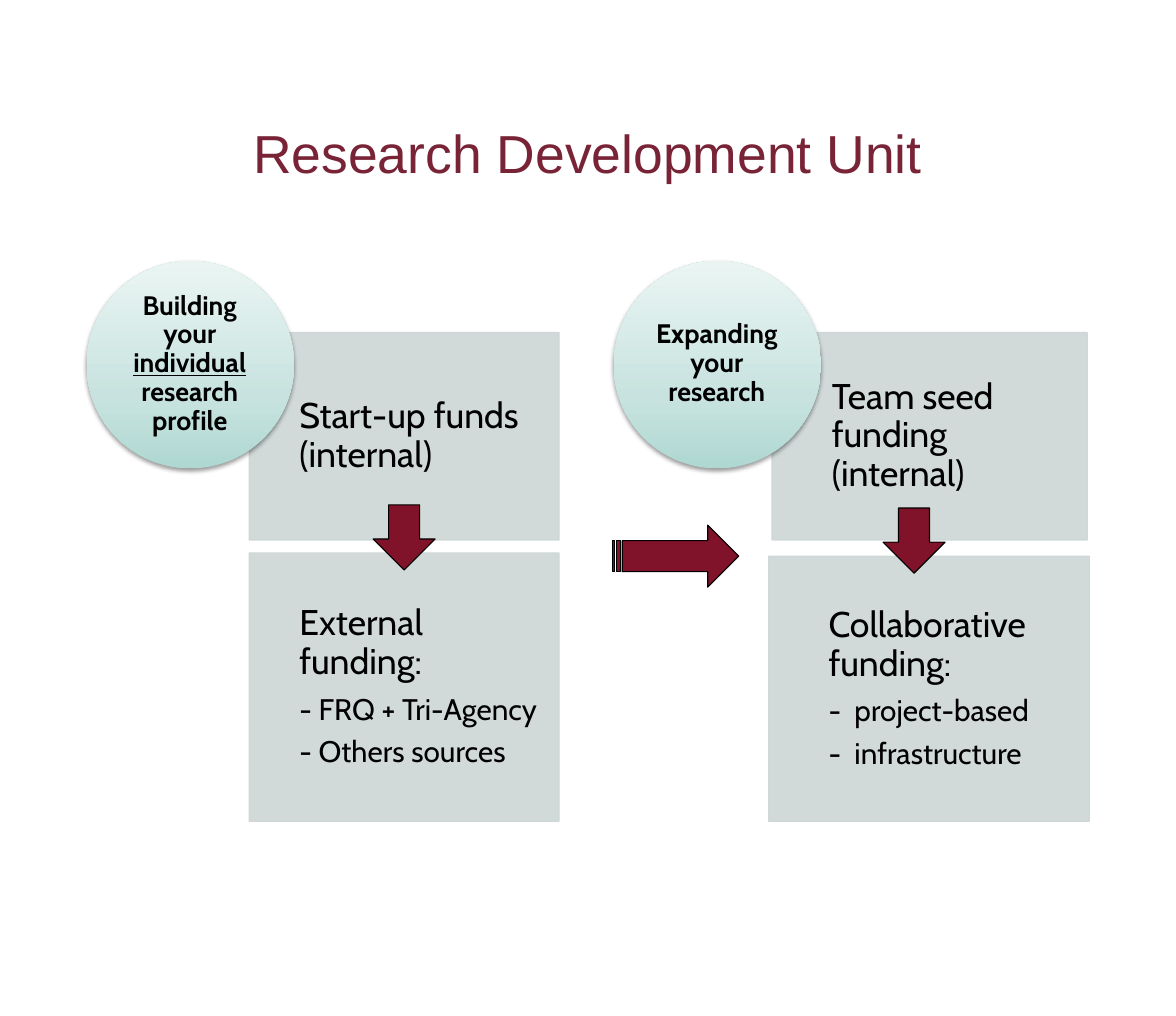
from dataclasses import dataclass
from typing import NamedTuple

from lxml.etree import SubElement
from pptx import Presentation
from pptx.dml.color import RGBColor
from pptx.enum.shapes import MSO_SHAPE
from pptx.enum.text import MSO_ANCHOR, PP_ALIGN
from pptx.oxml import parse_xml
from pptx.oxml.ns import nsdecls, qn
from pptx.util import Emu, Pt

PIXEL = 9144


@dataclass(frozen=True)
class Theme:
    title_color: str = "782336"
    text_color: str = "000000"
    panel: str = "CCD6D5"
    arrow: str = "801329"
    circle_stops: tuple = ((0, "AFD8D2"), (35, "C8E3DF"), (100, "EAF5F3"))
    title_font: str = "Arial"
    body_font: str = "Cabin"
    title_size: int = 36
    heading_size: int = 24
    item_size: int = 20
    circle_size: int = 18


class Box(NamedTuple):
    left: int
    top: int
    width: int
    height: int


class Words(NamedTuple):
    text: str
    underline: bool = False


class Panel(NamedTuple):
    box: Box
    heading: str
    items: tuple = ()
    margin: int = 0
    hanging: int = 0


class Circle(NamedTuple):
    left: int
    words: tuple


class Arrow(NamedTuple):
    kind: MSO_SHAPE
    box: Box


THEME = Theme()
PANELS = (
    Panel(Box(233, 311, 290, 194), "Start-up funds (internal)"),
    Panel(Box(233, 517, 290, 251), "External funding:",
          ("- FRQ + Tri-Agency", "- Others sources"), hanging=20),
    Panel(Box(722, 311, 295, 194), "Team seed funding (internal)", margin=9),
    Panel(Box(719, 520, 300, 248), "Collaborative funding:",
          ("-  project-based", "-  infrastructure"), margin=9),
)
CIRCLES = (
    Circle(81, (Words("Building your "), Words("individual", True),
                Words(" research profile"))),
    Circle(574, (Words("Expanding your research"),)),
)
ARROWS = (
    Arrow(MSO_SHAPE.STRIPED_RIGHT_ARROW, Box(573, 491, 118, 58)),
    Arrow(MSO_SHAPE.DOWN_ARROW, Box(349, 472, 58, 61)),
    Arrow(MSO_SHAPE.DOWN_ARROW, Box(826, 475, 58, 61)),
)


def px(value: int) -> Emu:
    """Turn pixels into EMU."""
    return Emu(value * PIXEL)


def rgb(color: str) -> RGBColor:
    """Turn a hex code into a colour."""
    return RGBColor.from_string(color)


def set_insets(frame, left: int, top: int, right: int, bottom: int) -> None:
    """Set the four margins of a text frame."""
    frame.margin_left, frame.margin_top = px(left), px(top)
    frame.margin_right, frame.margin_bottom = px(right), px(bottom)


def add_run(paragraph, text: str, font: str, size: int, color: str,
            bold: bool = False, underline: bool = False) -> None:
    """Append one formatted run."""
    run = paragraph.add_run()
    run.text = text
    run.font.name, run.font.size = font, Pt(size)
    run.font.bold, run.font.underline = bold, underline
    run.font.color.rgb = rgb(color)


def add_label(slide, box: Box, inset: int):
    """Add an empty, vertically centred text box and return its frame."""
    frame = slide.shapes.add_textbox(*map(px, box)).text_frame
    frame.word_wrap = True
    frame.vertical_anchor = MSO_ANCHOR.MIDDLE
    set_insets(frame, 0, inset, inset, inset)
    return frame


def space_lines(paragraph) -> None:
    """Use tight lines and a gap after in proportion to the text size."""
    paragraph.line_spacing = 0.9
    properties = paragraph._p.get_or_add_pPr()
    gap = SubElement(properties, qn("a:spcAft"))
    SubElement(gap, qn("a:spcPct")).set("val", "35000")


def indent(paragraph, margin: int, first_line: int) -> None:
    """Set the left margin and first-line indent."""
    properties = paragraph._p.get_or_add_pPr()
    properties.set("marL", str(px(margin)))
    properties.set("indent", str(px(first_line)))


def add_shape(slide, kind: MSO_SHAPE, box: Box, fill: str, line: str):
    """Add a flat filled and outlined shape."""
    shape = slide.shapes.add_shape(kind, *map(px, box))
    shape.shadow.inherit = False
    shape.fill.solid()
    shape.fill.fore_color.rgb = rgb(fill)
    shape.line.color.rgb = rgb(line)
    shape.line.width = Pt(0.75)
    return shape


def add_panel(slide, panel: Panel) -> None:
    """Add a translucent panel with its heading and items."""
    shape = add_shape(slide, MSO_SHAPE.RECTANGLE, panel.box, THEME.panel, THEME.panel)
    for color in shape._element.spPr.iter(qn("a:srgbClr")):
        SubElement(color, qn("a:alpha")).set("val", "90000")
    left, top, width, height = panel.box
    frame = add_label(slide, Box(left + 47, top, width - 47, height), 19)
    for index, text in enumerate((panel.heading, *panel.items)):
        paragraph = frame.add_paragraph() if index else frame.paragraphs[0]
        space_lines(paragraph)
        hanging = panel.hanging if index else 0
        indent(paragraph, panel.margin + hanging, -hanging)
        size = THEME.item_size if index else THEME.heading_size
        add_run(paragraph, text, THEME.body_font, size, THEME.text_color)


def add_circle(slide, circle: Circle) -> None:
    """Add a shaded circle with a bold centred caption."""
    shape = slide.shapes.add_shape(
        MSO_SHAPE.OVAL, *map(px, Box(circle.left, 244, 194, 194)))
    shape.line.fill.background()
    stops = "".join(f'<a:gs pos="{position * 1000}"><a:srgbClr val="{color}"/></a:gs>'
                    for position, color in THEME.circle_stops)
    properties = shape._element.spPr
    properties.insert(2, parse_xml(
        f'<a:gradFill {nsdecls("a")} rotWithShape="1"><a:gsLst>{stops}</a:gsLst>'
        '<a:lin ang="16200000" scaled="0"/></a:gradFill>'))
    properties.append(parse_xml(
        f'<a:effectLst {nsdecls("a")}><a:outerShdw blurRad="40000" dist="20000" '
        f'dir="5400000" rotWithShape="0"><a:srgbClr val="{THEME.text_color}">'
        '<a:alpha val="38000"/></a:srgbClr></a:outerShdw></a:effectLst>'))
    frame = add_label(slide, Box(circle.left + 28, 272, 137, 137), 0)
    paragraph = frame.paragraphs[0]
    space_lines(paragraph)
    paragraph.alignment = PP_ALIGN.CENTER
    for words in circle.words:
        add_run(paragraph, words.text, THEME.body_font, THEME.circle_size,
                THEME.text_color, True, words.underline)


def add_title(slide, text: str, box: Box) -> None:
    """Place and fill the title placeholder."""
    title = slide.shapes.title
    title.left, title.top, title.width, title.height = map(px, box)
    frame = title.text_frame
    frame.vertical_anchor = MSO_ANCHOR.MIDDLE
    set_insets(frame, 12, 6, 12, 16)
    frame.paragraphs[0].alignment = PP_ALIGN.CENTER
    add_run(frame.paragraphs[0], text, THEME.title_font, THEME.title_size,
            THEME.title_color)


def main() -> None:
    """Build and save the slide."""
    presentation = Presentation()
    presentation.slide_width, presentation.slide_height = px(1100), px(950)
    slide = presentation.slides.add_slide(presentation.slide_layouts[5])
    add_title(slide, "Research Development Unit", Box(82, 103, 935, 89))
    for panel in PANELS:
        add_panel(slide, panel)
    for circle in CIRCLES:
        add_circle(slide, circle)
    for arrow in ARROWS:
        add_shape(slide, arrow.kind, arrow.box, THEME.arrow, THEME.text_color)
    presentation.save("out.pptx")


if __name__ == "__main__":
    main()
